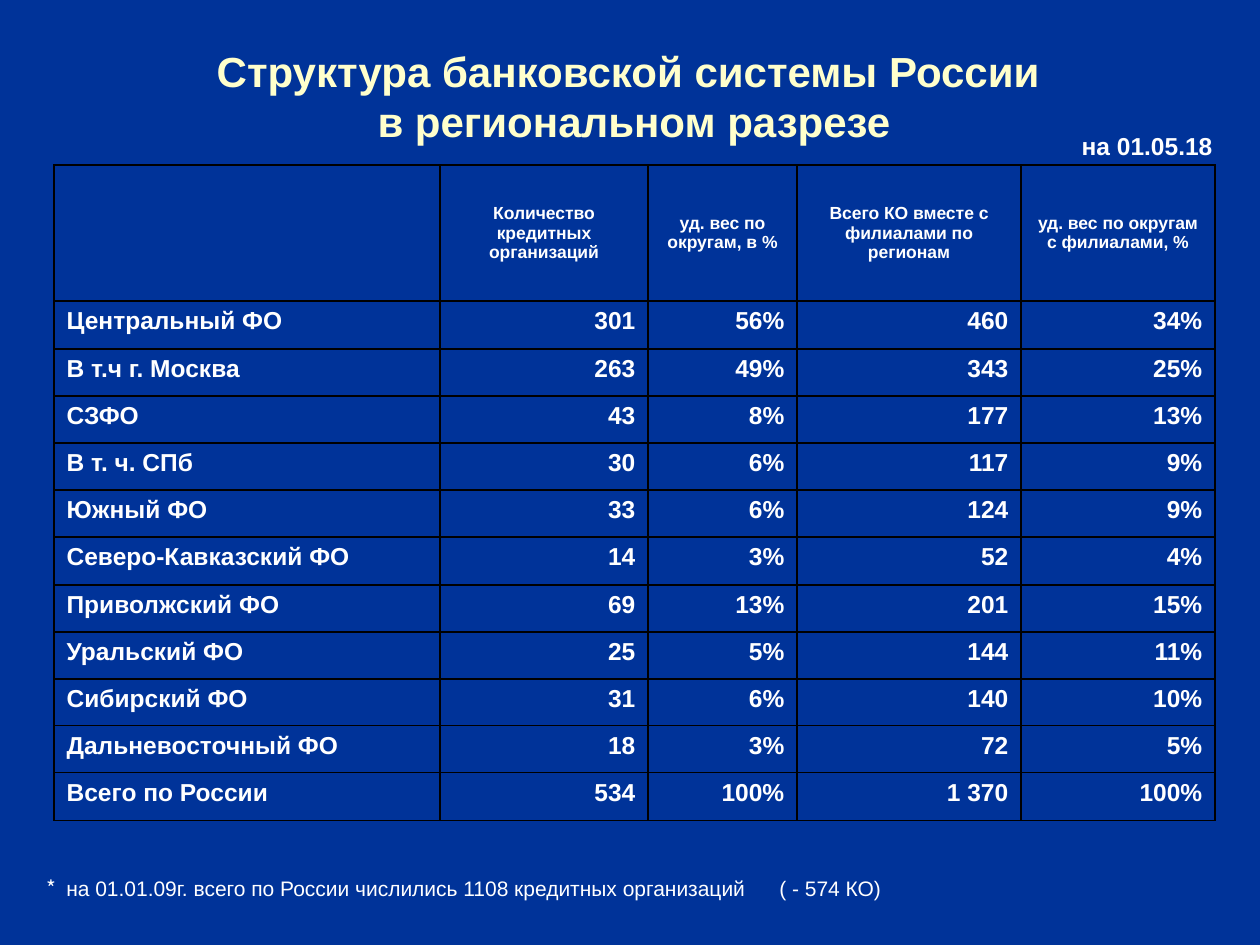
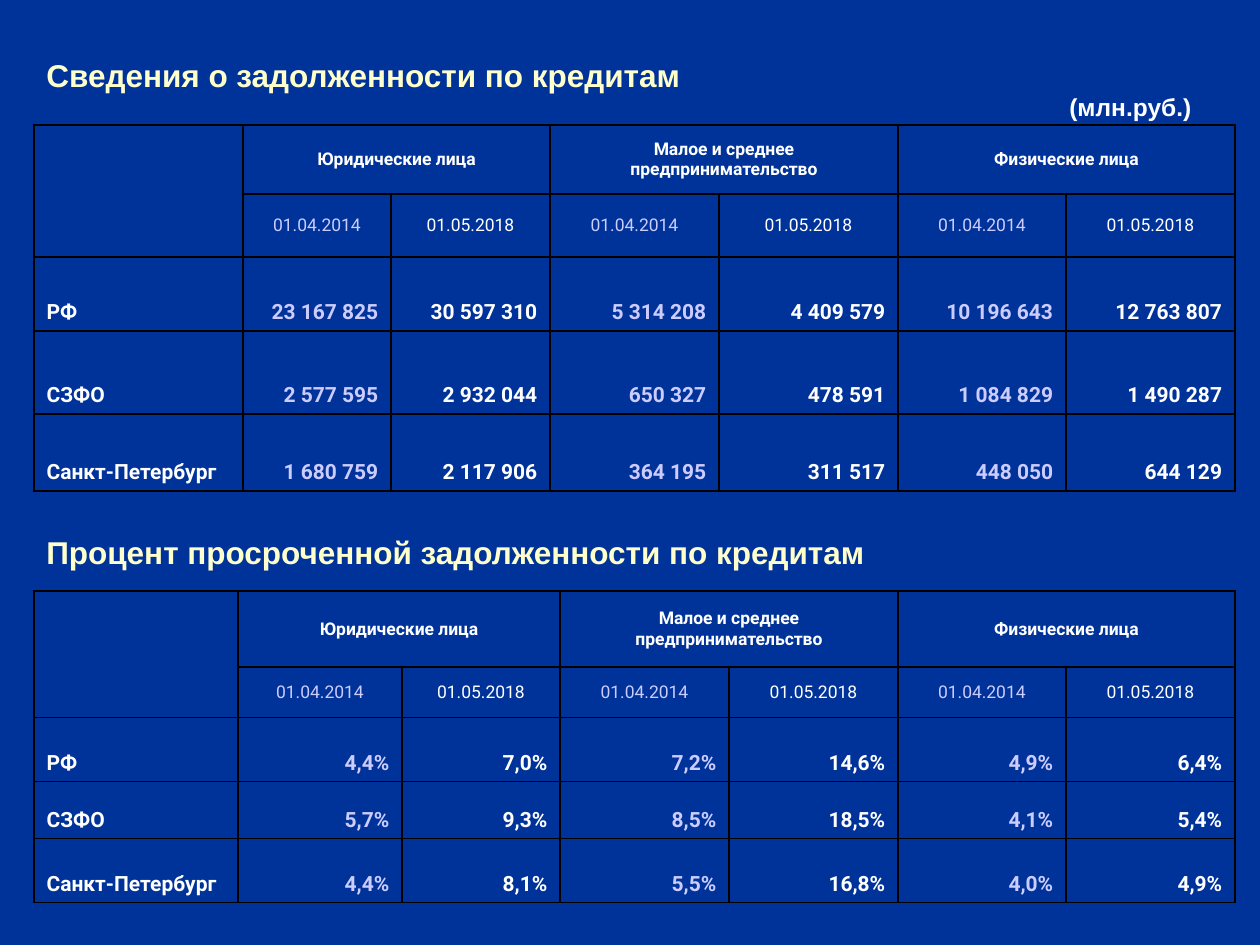
"""Two slides on Russian banks: regional structure and loan debt."""
import lxml.etree
import pptx
import pptx.dml.color
import pptx.enum.text
import pptx.oxml.ns
import pptx.util

PX = pptx.util.Inches(1) / 126
COLORS = {"back": "003399", "title": "FFFFCC", "text": "FFFFFF", "past": "CCCCFF", "border": "000000"}
ALIGN = pptx.enum.text.PP_ALIGN
ANCHOR = pptx.enum.text.MSO_ANCHOR
qn = pptx.oxml.ns.qn


def write(frame, text, size, color="text", font="Arial", bold=True, align=ALIGN.LEFT):
    frame.text = text
    para = frame.paragraphs[0]
    para.alignment = align
    for span in para.runs:
        span.font.size = pptx.util.Pt(size)
        span.font.name = font
        span.font.bold = bold
        span.font.color.rgb = pptx.dml.color.RGBColor.from_string(COLORS[color])


def add_grid(page, left, top, widths, heights):
    frame = page.shapes.add_table(
        len(heights), len(widths),
        *(round(length * PX) for length in (left, top, sum(widths), sum(heights))))
    table = frame.table
    table.first_row = table.horz_banding = False
    for column, width in zip(table.columns, widths):
        column.width = round(width * PX)
    for row, height in zip(table.rows, heights):
        row.height = round(height * PX)
    for cell in table.iter_cells():
        cell.fill.background()
        properties = cell._tc.get_or_add_tcPr()
        for position, side in enumerate(("a:lnL", "a:lnR", "a:lnT", "a:lnB")):
            line = lxml.etree.Element(qn(side), w=str(pptx.util.Pt(1)))
            fill = lxml.etree.SubElement(line, qn("a:solidFill"))
            lxml.etree.SubElement(fill, qn("a:srgbClr"), val=COLORS["border"])
            properties.insert(position, line)
    return table


deck = pptx.Presentation()
deck.slide_width = round(1260 * PX)
deck.slide_height = round(945 * PX)

page_texts = [
    [
        ("Структура банковской системы России \vв региональном разрезе",
         (123, 26, 1022, 139), 24, "title", ALIGN.CENTER, ANCHOR.MIDDLE),
        ("на 01.05.18", (1017, 125, 208, 42), 14, "text", ALIGN.RIGHT, ANCHOR.TOP),
    ],
    [
        ("Сведения о задолженности по кредитам",
         (34, 45, 1091, 60), 18, "title", ALIGN.LEFT, ANCHOR.MIDDLE),
        ("(млн.руб.)", (1057, 86, 149, 42), 14, "text", ALIGN.LEFT, ANCHOR.TOP),
        ("Процент просроченной задолженности по кредитам",
         (34, 522, 1071, 59), 18, "title", ALIGN.LEFT, ANCHOR.MIDDLE),
    ],
]
for texts in page_texts:
    page = deck.slides.add_slide(deck.slide_layouts[6])
    page.background.fill.solid()
    page.background.fill.fore_color.rgb = pptx.dml.color.RGBColor.from_string(COLORS["back"])
    for text, place, size, color, align, anchor in texts:
        box = page.shapes.add_textbox(*(round(length * PX) for length in place))
        box.text_frame.word_wrap = True
        box.text_frame.vertical_anchor = anchor
        write(box.text_frame, text, size, color, align=align)
structure_page, debt_page = deck.slides

footnote = structure_page.shapes.add_textbox(*(round(length * PX) for length in (34, 869, 922, 38)))
footnote.text_frame.word_wrap = True
para = footnote.text_frame.paragraphs[0]
tabs = lxml.etree.SubElement(para._p.get_or_add_pPr(), qn("a:tabLst"))
for stop in (20, 733):
    lxml.etree.SubElement(tabs, qn("a:tab"), pos=str(round(stop * PX)), algn="l")
for text, font in (
    ("*", "Noto Sans CJK KR"),
    ("\tна 01.01.09г. всего по России числились 1108 кредитных организаций\t( - 574 КО)", "Arial"),
):
    span = para.add_run()
    span.text = text
    span.font.size = pptx.util.Pt(12)
    span.font.name = font
    span.font.color.rgb = pptx.dml.color.RGBColor.from_string(COLORS["text"])

structure_rows = [
    ("", "Количество кредитных организаций", "уд. вес по округам, в %",
     "Всего КО вместе с филиалами по регионам", "уд. вес по округам с филиалами, %"),
    ("Центральный ФО", "301", "56%", "460", "34%"),
    ("В т.ч г. Москва", "263", "49%", "343", "25%"),
    ("СЗФО", "43", "8%", "177", "13%"),
    ("В т. ч. СПб", "30", "6%", "117", "9%"),
    ("Южный ФО", "33", "6%", "124", "9%"),
    ("Северо-Кавказский ФО", "14", "3%", "52", "4%"),
    ("Приволжский ФО", "69", "13%", "201", "15%"),
    ("Уральский ФО", "25", "5%", "144", "11%"),
    ("Сибирский ФО", "31", "6%", "140", "10%"),
    ("Дальневосточный ФО", "18", "3%", "72", "5%"),
    ("Всего по России", "534", "100%", "1 370", "100%"),
]
structure_heights = [136] + [48, 47, 47, 47, 47] * 2 + [48]
table = add_grid(structure_page, 54, 165, (386, 208, 149, 224, 194), structure_heights)
for row, values in enumerate(structure_rows):
    for column, value in enumerate(values):
        cell = table.cell(row, column)
        if row == 0:
            cell.vertical_anchor = ANCHOR.MIDDLE
            write(cell.text_frame, value, 10, align=ALIGN.CENTER)
        else:
            write(cell.text_frame, value, 14, align=ALIGN.RIGHT if column else ALIGN.LEFT)

borrowers = ("Юридические лица", "Малое и среднее предпринимательство", "Физические лица")
dates = ("01.04.2014", "01.05.2018")
regions = ("РФ", "СЗФО", "Санкт-Петербург")
debt_tables = [
    (591, (204, 164, 158, 169, 169, 168, 169), (76, 47, 64, 57, 64), [
        ("4,4%", "7,0%", "7,2%", "14,6%", "4,9%", "6,4%"),
        ("5,7%", "9,3%", "8,5%", "18,5%", "4,1%", "5,4%"),
        ("4,4%", "8,1%", "5,5%", "16,8%", "4,0%", "4,9%"),
    ]),
    (125, (209, 148, 159, 169, 179, 168, 169), (69, 63, 74, 83, 77), [
        ("23 167 825", "30 597 310", "5 314 208", "4 409 579", "10 196 643", "12 763 807"),
        ("2 577 595", "2 932 044", "650 327", "478 591", "1 084 829", "1 490 287"),
        ("1 680 759", "2 117 906", "364 195", "311 517", "448 050", "644 129"),
    ]),
]
for top, widths, heights, debts in debt_tables:
    table = add_grid(debt_page, 34, top, widths, heights)
    table.cell(0, 0).merge(table.cell(1, 0))
    for index, borrower in enumerate(borrowers):
        first = 1 + 2 * index
        cell = table.cell(0, first)
        cell.merge(table.cell(0, first + 1))
        cell.vertical_anchor = ANCHOR.MIDDLE
        write(cell.text_frame, borrower, 10, font="Roboto", align=ALIGN.CENTER)
        for offset, date in enumerate(dates):
            cell = table.cell(1, first + offset)
            cell.vertical_anchor = ANCHOR.MIDDLE
            write(cell.text_frame, date, 10, ("past", "text")[offset], "Roboto", False, ALIGN.CENTER)
    for row, (region, values) in enumerate(zip(regions, debts), 2):
        for column, value in enumerate((region, *values)):
            cell = table.cell(row, column)
            cell.vertical_anchor = ANCHOR.BOTTOM
            write(cell.text_frame, value, 12, "past" if column % 2 else "text", "Roboto",
                  align=ALIGN.RIGHT if column else ALIGN.LEFT)

deck.save("out.pptx")
